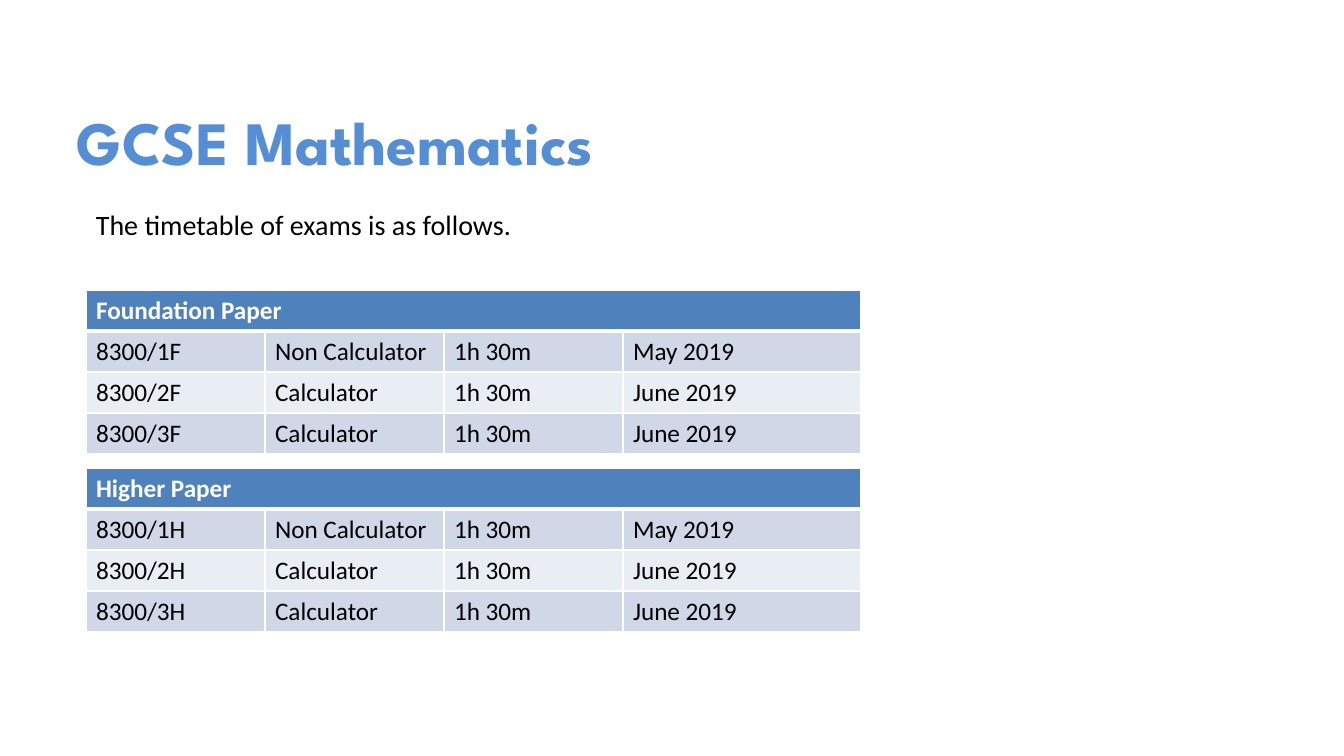
from lxml.etree import SubElement
from pptx import Presentation
from pptx.dml.color import RGBColor
from pptx.enum.text import MSO_ANCHOR
from pptx.oxml.ns import qn
from pptx.util import Emu, Pt

TITLE = "GCSE Mathematics"
INTRO = "The timetable of exams is as follows."
SITTINGS = [
    ("Non Calculator", "1h 30m", "May 2019"),
    ("Calculator", "1h 30m", "June 2019"),
    ("Calculator", "1h 30m", "June 2019"),
]
TIERS = ["Foundation Paper", "Higher Paper"]

THEME = {
    "title": {"name": "League Spartan", "size": Pt(44), "bold": True, "color": "558ED5"},
    "intro": {"name": "Calibri", "size": Pt(20), "bold": False, "color": "000000"},
    "header": {"name": "Calibri", "size": Pt(18), "bold": True, "color": "FFFFFF"},
    "body": {"name": "Calibri", "size": Pt(18), "bold": False, "color": "000000"},
    "header_fill": "4F81BD",
    "band_fills": ("D0D8E8", "E9EDF4"),
    "border": "FFFFFF",
}

SLIDE_SIZE = (1344, 756)
TITLE_BOX = (67, 78, 1210, 126)
INTRO_BOX = (86, 203, 1190, 445)
TABLE_LEFT, TABLE_TOP, TABLE_PITCH = 86, 290, 178
COLUMN_WIDTHS = (179, 179, 179, 238)
ROW_HEIGHT = 41
THIN, THICK = Pt(1), Pt(3)


def px(length):
    return Emu(round(length * 914400 / 100.8))


def write(text_frame, text, style):
    paragraph = text_frame.paragraphs[0]
    paragraph.text = text
    for name, value in THEME[style].items():
        if name == "color":
            paragraph.font.color.rgb = RGBColor.from_string(value)
        else:
            setattr(paragraph.font, name, value)


def add_text(slide, box, text, style, anchor):
    text_frame = slide.shapes.add_textbox(*map(px, box)).text_frame
    text_frame.word_wrap = True
    text_frame.vertical_anchor = anchor
    write(text_frame, text, style)


def format_cell(cell, fill, top, bottom):
    """Draw the borders, which must come before the fill in the XML, then fill."""
    properties = cell._tc.get_or_add_tcPr()
    widths = {"lnL": THIN, "lnR": THIN, "lnT": top, "lnB": bottom}
    for side, width in widths.items():
        line = SubElement(properties, qn(f"a:{side}"), w=str(int(width)))
        solid = SubElement(line, qn("a:solidFill"))
        SubElement(solid, qn("a:srgbClr"), val=THEME["border"])
    cell.fill.solid()
    cell.fill.fore_color.rgb = RGBColor.from_string(fill)


def add_timetable(slide, top, tier):
    rows = [(tier, "", "", "")]
    for number, sitting in enumerate(SITTINGS, 1):
        rows.append((f"8300/{number}{tier[0]}", *sitting))
    box = (TABLE_LEFT, top, sum(COLUMN_WIDTHS), ROW_HEIGHT * len(rows))
    table = slide.shapes.add_table(len(rows), len(COLUMN_WIDTHS), *map(px, box)).table
    for column, width in zip(table.columns, COLUMN_WIDTHS):
        column.width = px(width)
    for index, values in enumerate(rows):
        table.rows[index].height = px(ROW_HEIGHT)
        header = index == 0
        fill = THEME["header_fill"] if header else THEME["band_fills"][(index - 1) % 2]
        for cell, value in zip(table.rows[index].cells, values):
            format_cell(cell, fill, THICK if index == 1 else THIN, THICK if header else THIN)
            if value:
                write(cell.text_frame, value, "header" if header else "body")
    table.cell(0, 0).merge(table.cell(0, len(COLUMN_WIDTHS) - 1))


def main():
    presentation = Presentation()
    presentation.slide_width, presentation.slide_height = map(px, SLIDE_SIZE)
    slide = presentation.slides.add_slide(presentation.slide_layouts[6])
    add_text(slide, INTRO_BOX, INTRO, "intro", MSO_ANCHOR.TOP)
    add_text(slide, TITLE_BOX, TITLE, "title", MSO_ANCHOR.MIDDLE)
    for index, tier in enumerate(TIERS):
        add_timetable(slide, TABLE_TOP + index * TABLE_PITCH, tier)
    presentation.save("out.pptx")


if __name__ == "__main__":
    main()
